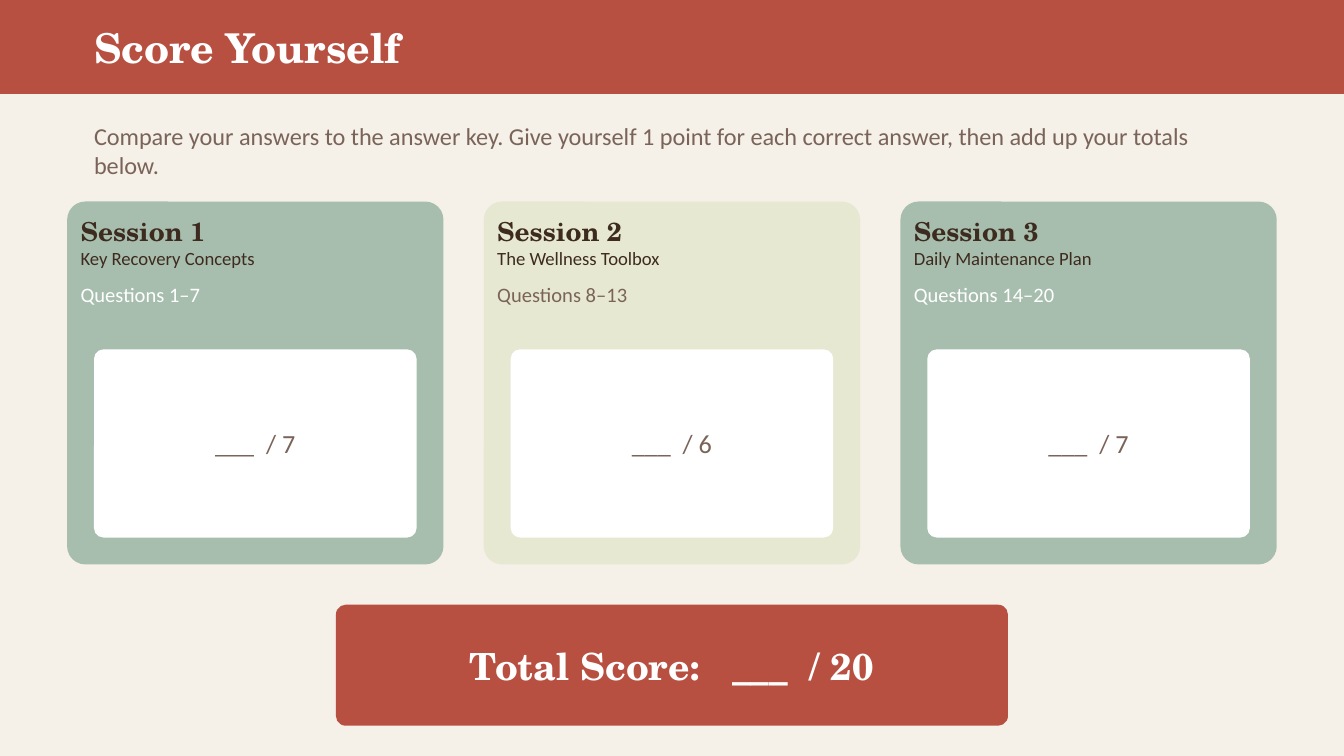
from pptx import Presentation
from pptx import util as u
from pptx.dml.color import RGBColor
from pptx.enum import shapes, text

PX = 4572  # EMU per px, 200 px to the inch
HEADING, BODY = "TeX Gyre Schola", "Calibri"
RED, SAGE, CREAM, WHITE = "B85042", "A7BEAE", "E7E8D1", "FFFFFF"
DARK, BROWN = "3D2B1F", "7A6459"
LEFT, CENTER = text.PP_ALIGN.LEFT, text.PP_ALIGN.CENTER
TOP, MIDDLE = text.MSO_ANCHOR.TOP, text.MSO_ANCHOR.MIDDLE

presentation = Presentation()
presentation.slide_width, presentation.slide_height = 2000 * PX, 1125 * PX
slide = presentation.slides.add_slide(presentation.slide_layouts[5])
slide.background.fill.solid()
slide.background.fill.fore_color.rgb = RGBColor.from_string("F5F0E8")


def add_panel(left, top, width, height, color, radius=0):
    kind = shapes.MSO_SHAPE.ROUNDED_RECTANGLE if radius else shapes.MSO_SHAPE.RECTANGLE
    shape = slide.shapes.add_shape(kind, left * PX, top * PX, width * PX, height * PX)
    if radius:
        shape.adjustments[0] = radius
    shape.shadow.inherit = False
    shape.fill.solid()
    shape.fill.fore_color.rgb = RGBColor.from_string(color)
    shape.line.fill.background()
    return shape


def write(shape, lines, anchor=TOP, align=LEFT, margin=0):
    """Each line is (words, size, font, color, bold)."""
    frame = shape.text_frame
    frame.word_wrap = True
    frame.auto_size = text.MSO_AUTO_SIZE.NONE
    frame.vertical_anchor = anchor
    frame.margin_left = frame.margin_right = margin * PX
    frame.margin_top = frame.margin_bottom = margin * PX
    for index, (words, size, font, color, bold) in enumerate(lines):
        paragraph = frame.add_paragraph() if index else frame.paragraphs[0]
        paragraph.alignment = align
        run = paragraph.add_run()
        run.text = words
        run.font.size, run.font.name, run.font.bold = u.Pt(size), font, bold
        run.font.color.rgb = RGBColor.from_string(color)


# Header bar, placed behind the title
bar = add_panel(0, 0, 2000, 140, RED)
title = slide.shapes.title
title.element.addprevious(bar.element)
title.left, title.top, title.width, title.height = [n * PX for n in (140, 16, 1720, 108)]
write(title, [("Score Yourself", 22, HEADING, WHITE, True)], MIDDLE)

# Instructions
instructions = slide.shapes.add_textbox(140 * PX, 180 * PX, 1720 * PX, 100 * PX)
write(instructions, [("Compare your answers to the answer key. Give yourself 1 point for each "
                      "correct answer, then add up your totals below.", 13, BODY, BROWN, False)])

# Session cards
sessions = [
    ("Session 1", "Key Recovery Concepts", "Questions 1–7", "___  / 7", SAGE, WHITE),
    ("Session 2", "The Wellness Toolbox", "Questions 8–13", "___  / 6", CREAM, BROWN),
    ("Session 3", "Daily Maintenance Plan", "Questions 14–20", "___  / 7", SAGE, WHITE),
]
for column, (name, topic, questions, score, fill, questions_color) in enumerate(sessions):
    left = 100 + column * 620
    add_panel(left, 300, 560, 540, fill, 0.05)
    heading = slide.shapes.add_textbox((left + 20) * PX, 320 * PX, 520 * PX, 80 * PX)
    write(heading, [(name, 14, HEADING, DARK, True), (topic, 10, BODY, DARK, False)], MIDDLE)
    label = slide.shapes.add_textbox((left + 20) * PX, 420 * PX, 520 * PX, 80 * PX)
    write(label, [(questions, 11, BODY, questions_color, False)])
    score_box = add_panel(left + 40, 520, 480, 280, WHITE, 0.05)
    write(score_box, [(score, 14, BODY, BROWN, False)], MIDDLE, CENTER, 10)

# Total score
total = add_panel(500, 900, 1000, 180, RED, 0.08)
write(total, [("Total Score:   ___  / 20", 20, HEADING, WHITE, True)], MIDDLE, CENTER, 10)

presentation.save("out.pptx")
